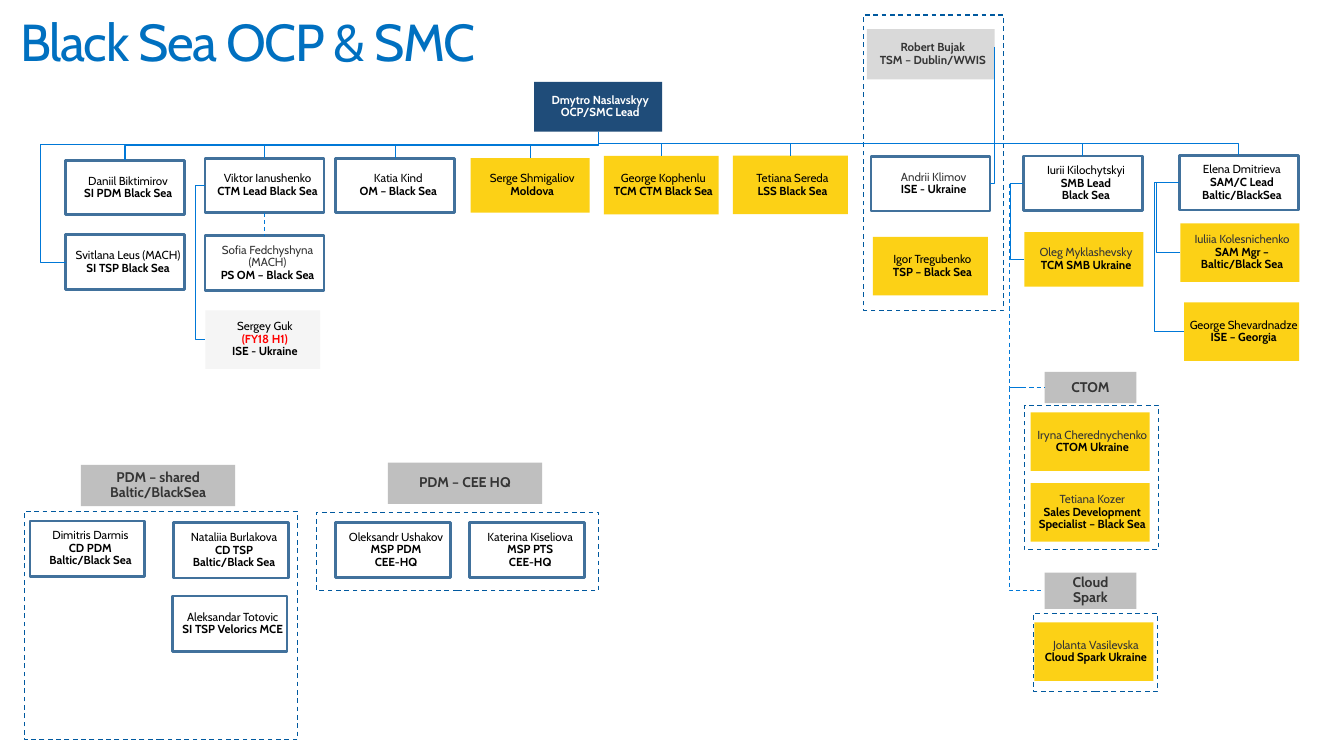
import pptx
import pptx.util
import pptx.dml.color
import pptx.enum.dml
import pptx.enum.shapes
import pptx.enum.text
import pptx.oxml.ns
import lxml.etree

Pt = pptx.util.Pt
qn = pptx.oxml.ns.qn
COLOURS = {"title": "0070C0", "navy": "1F4C79", "gold": "FCD116", "white": "FFFFFF", "steel": "41719C",
           "silver": "D9D9D9", "grey": "BFBFBF", "pale": "F5F5F5", "ink": "000000", "soft": "353535",
           "red": "FF0000", "frame": "00599F", "wire": "0078D7"}
STYLES = {
    "lead": dict(fill="navy", name="white", role="white", bold=True),
    "manager": dict(fill="silver", name="soft", role="soft", bold=True),
    "heading": dict(fill="grey", name="soft", bold=True, size=10, inset=14.4, right=14.4),
    "staff": dict(fill="white", line="steel", inset=4.3),
    "staff soft": dict(fill="white", line="steel", inset=4.3, name="soft"),
    "open": dict(fill="gold"),
    "open soft": dict(fill="gold", name="soft"),
    "future": dict(fill="pale"),
}
WIDE, TALL, SMALL, PARTNER = (85, 39), (85, 41.8), (82.1, 41.8), (82.1, 39.6)
TOP, LEFT, BOTTOM = 0, 1, 2

def rgb(name):
    return pptx.dml.color.RGBColor.from_string(COLOURS[name])

def set_all(target, **values):
    for key, value in values.items():
        setattr(target, key, value)

def write(para, text, size, colour, bold=False):
    para.line_spacing = 0.9
    span = para.add_run()
    span.text = text
    set_all(span.font, name="Cabin", size=Pt(size), bold=bold)
    span.font.color.rgb = rgb(colour)
    return span

def rectangle(page, *box):
    shape = page.shapes.add_shape(pptx.enum.shapes.MSO_SHAPE.RECTANGLE, *map(Pt, box))
    shape.shadow.inherit = False
    return shape

def card(page, style, left, top, size, name, *roles):
    look = STYLES[style]
    shape = rectangle(page, left, top, *size)
    shape.fill.solid()
    shape.fill.fore_color.rgb = rgb(look["fill"])
    if "line" in look:
        shape.line.color.rgb = rgb(look["line"])
        shape.line.width = Pt(2)
    else:
        shape.line.fill.background()
    frame = shape.text_frame
    set_all(frame, word_wrap=True, margin_left=Pt(look.get("inset", 2.9)), margin_right=Pt(look.get("right", 0)),
            margin_top=0, margin_bottom=0, vertical_anchor=pptx.enum.text.MSO_ANCHOR.MIDDLE)
    for index, text in enumerate((name, *roles)):
        para = frame.add_paragraph() if index else frame.paragraphs[0]
        para.alignment = pptx.enum.text.PP_ALIGN.CENTER
        colour = look.get("role" if index else "name", "ink")
        write(para, text, look.get("size", 8.3), colour, bool(index) or look.get("bold", False))
    return shape

def dashed_frame(page, *box):
    shape = rectangle(page, *box)
    shape.fill.background()
    set_all(shape.line, width=Pt(0.85), dash_style=pptx.enum.dml.MSO_LINE.DASH)
    shape.line.color.rgb = rgb("frame")

def side(shape, site):
    """Middle of the top, left or bottom side."""
    if site == LEFT:
        return shape.left, shape.top + shape.height // 2
    return shape.left + shape.width // 2, shape.top + (shape.height if site == BOTTOM else 0)

def wire(page, start, end, kind="ELBOW", dashed=False):
    line = page.shapes.add_connector(pptx.enum.shapes.MSO_CONNECTOR[kind], *start, *end)
    line.line.width = Pt(0.75)
    line.line.color.rgb = rgb("wire")
    if dashed:
        line.line.dash_style = pptx.enum.dml.MSO_LINE.DASH
    lxml.etree.SubElement(line.element.spPr, qn("a:effectLst"))
    return line

def reshape(line, preset, *adjustments):
    geometry = line.element.spPr.find(qn("a:prstGeom"))
    geometry.set("prst", preset)
    for number, value in enumerate(adjustments, 1):
        lxml.etree.SubElement(geometry.find(qn("a:avLst")), qn("a:gd"),
                              name=f"adj{number}", fmla=f"val {round(value * 100000)}")

def drop(page, start, end):
    """Elbow that leaves downwards, runs across and goes down again."""
    across, down = abs(end[0] - start[0]), end[1] - start[1]
    left, top = (start[0] + end[0] - down) // 2, (start[1] + end[1] - across) // 2
    ends = (top + across, top) if end[0] > start[0] else (top, top + across)
    line = wire(page, (left, ends[0]), (left + down, ends[1]))
    line.element.spPr.find(qn("a:xfrm")).set("rot", "5400000")

def bracket(page, start, end, reach, dashed=False):
    """Elbow that runs out to the left by reach and comes back."""
    reshape(wire(page, start, end, dashed=dashed), "bentConnector3", -Pt(reach) / (end[0] - start[0]))

def title(page, left, top, width, height):
    holder = page.shapes.title
    set_all(holder, left=Pt(left), top=Pt(top), width=Pt(width), height=Pt(height))
    set_all(holder.text_frame, word_wrap=True, auto_size=pptx.enum.text.MSO_AUTO_SIZE.NONE,
            margin_left=Pt(11.5), margin_right=Pt(11.5), margin_top=Pt(7.2), margin_bottom=Pt(7.2),
            vertical_anchor=pptx.enum.text.MSO_ANCHOR.TOP)
    para = holder.text_frame.paragraphs[0]
    para.alignment = pptx.enum.text.PP_ALIGN.LEFT
    write(para, "Black Sea OCP & SMC", 37.1, "title").font._element.set("spc", "-100")

def partner_branch(page, left, top, lead):
    head = card(page, "staff", left, top, WIDE, "Daniil Biktimirov", "SI PDM Black Sea")
    partner = card(page, "staff", left, top + 53.3, WIDE, "Svitlana Leus (MACH)", "SI TSP Black Sea")
    start, end = side(partner, LEFT), side(lead, BOTTOM)
    reshape(wire(page, start, end), "bentConnector4", -Pt(18) / (end[0] - start[0]), 0.9)
    return head

def technical_branch(page, left, top):
    head = card(page, "staff", left, top, WIDE, "Viktor Ianushenko", "CTM Lead Black Sea")
    manager = card(page, "staff soft", left, top + 55.5, WIDE, "Sofia Fedchyshyna (MACH)", "PS OM – Black Sea")
    future = card(page, "future", left + 0.3, top + 108.6, SMALL, "Sergey Guk", "(FY18 H1)", "ISE - Ukraine")
    future.text_frame.paragraphs[1].runs[0].font.color.rgb = rgb("red")
    line = wire(page, side(head, BOTTOM), side(manager, TOP), "STRAIGHT", dashed=True)
    line.begin_connect(head, BOTTOM)
    line.end_connect(manager, TOP)
    bracket(page, side(head, LEFT), side(future, LEFT), 6.7)
    return head

def engineering_group(page, left, top, width, height):
    dashed_frame(page, left, top, width, height)
    manager = card(page, "manager", left + 2.2, top + 10, (91.4, 36), "Robert Bujak", "TSM – Dublin/WWIS")
    engineer = card(page, "staff soft", left + 5.2, top + 101, WIDE, "Andrii Klimov", "ISE - Ukraine")
    card(page, "open", left + 6.5, top + 158.4, SMALL, "Igor Tregubenko", "TSP – Black Sea")
    start = (engineer.left + engineer.width, side(engineer, LEFT)[1])
    end = (manager.left + manager.width, manager.top + Pt(13))
    reshape(wire(page, start, end), "bentConnector2")

def small_business_branch(page, left, top):
    head = card(page, "staff", left, top, WIDE, "Iurii Kilochytskyi", "SMB Lead", "Black Sea")
    oleg = card(page, "open soft", left + 0.8, top + 54.3, WIDE, "Oleg Myklashevsky", "TCM SMB Ukraine")
    market = card(page, "heading", left + 15.1, top + 154.1, (65.6, 22.3), "CTOM")
    spark = card(page, "heading", left + 15.1, top + 297.5, (65.6, 26), "Cloud Spark")
    dashed_frame(page, left + 0.5, top + 178, 96, 103.2)
    dashed_frame(page, left + 7.3, top + 326.7, 88.6, 55.7)
    for across, down, *lines in ((5.2, 183, "Iryna Cherednychenko", "CTOM Ukraine"),
                                 (5.2, 233.5, "Tetiana Kozer", "Sales Development Specialist – Black Sea"),
                                 (7.8, 333, "Jolanta Vasilevska", "Cloud Spark Ukraine")):
        card(page, "open soft", left + across, top + down, TALL, *lines)
    start = side(head, LEFT)
    bracket(page, start, side(oleg, LEFT), 9.4)
    bracket(page, start, side(market, LEFT), 10.1, dashed=True)
    bracket(page, (start[0], side(market, LEFT)[1]), side(spark, LEFT), 10.1, dashed=True)
    return head

def asset_branch(page, left, top):
    head = card(page, "staff", left, top, WIDE, "Elena Dmitrieva", "SAM/C Lead Baltic/BlackSea")
    iuliia = card(page, "open soft", left + 0.8, top + 48.5, TALL, "Iuliia Kolesnichenko", "SAM Mgr – Baltic/Black Sea")
    george = card(page, "open", left + 3.5, top + 105, SMALL, "George Shevardnadze", "ISE – Georgia")
    for report, reach in ((iuliia, 16.6), (george, 18)):
        bracket(page, side(head, LEFT), side(report, LEFT), reach)
    return head

def partner_group(page, box, heading, across, down, members):
    dashed_frame(page, *box)
    card(page, "heading", box[0] + across, box[1] + down, (110.2, 29.5), heading)
    for right, below, *lines in members:
        card(page, "staff", box[0] + right, box[1] + below, PARTNER, *lines)

def main():
    deck = pptx.Presentation()
    set_all(deck, slide_width=Pt(960), slide_height=Pt(540))
    page = deck.slides.add_slide(deck.slide_layouts[5])
    title(page, 2.9, 5, 943, 53.3)
    lead = card(page, "lead", 381.6, 58.5, (91.4, 35.5), "Dmytro Naslavskyy", "OCP/SMC Lead")
    engineering_group(page, 617, 10.8, 100, 211)
    reports = [partner_branch(page, 46.8, 114.5, lead), technical_branch(page, 146.4, 113),
               card(page, "staff", 239.8, 113, WIDE, "Katia Kind", "OM – Black Sea"),
               card(page, "open", 336.2, 113, WIDE, "Serge Shmigaliov", "Moldova"),
               card(page, "open", 431.3, 111.4, SMALL, "George Kophenlu", "TCM CTM Black Sea"),
               card(page, "open", 523.6, 111.2, SMALL, "Tetiana Sereda", "LSS Black Sea"),
               small_business_branch(page, 731, 111.5), asset_branch(page, 842.4, 111)]
    for report in reports:
        drop(page, side(lead, BOTTOM), side(report, TOP))
    partner_group(page, (17.4, 365.3, 195.1, 163.2), "PDM – shared Baltic/BlackSea", 40.4, -33.2, [
        (4, 6.8, "Dimitris Darmis", "CD PDM", "Baltic/Black Sea"),
        (106.6, 8, "Nataliia Burlakova", "CD TSP", "Baltic/Black Sea"),
        (105.6, 60.4, "Aleksandar Totovic", "SI TSP Velorics MCE")])
    partner_group(page, (226, 366, 201.6, 56), "PDM – CEE HQ", 51, -35.6, [
        (13.7, 7.2, "Oleksandr Ushakov", "MSP PDM", "CEE-HQ"),
        (109.5, 7.2, "Katerina Kiseliova", "MSP PTS", "CEE-HQ")])
    deck.save("out.pptx")

if __name__ == "__main__":
    main()
